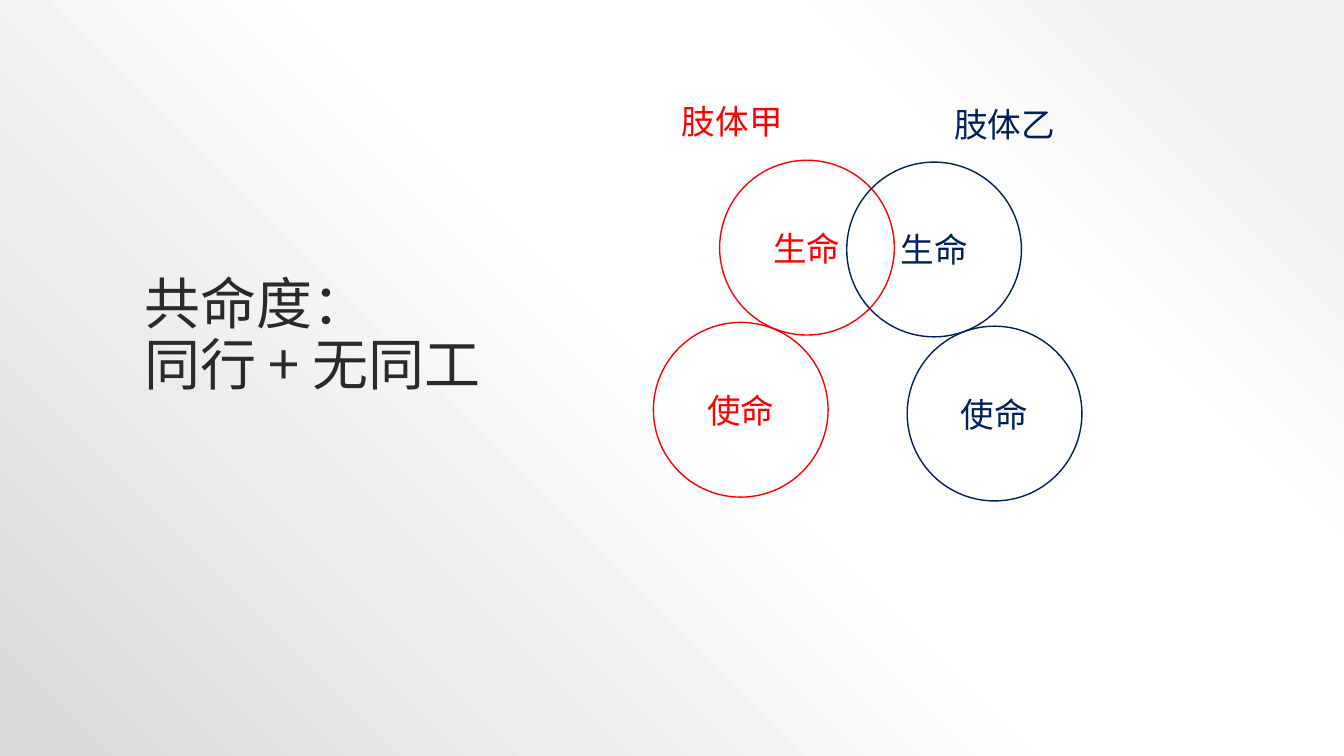
"""Build a slide on two members whose lives overlap while their missions stay apart."""
from dataclasses import dataclass

from lxml import etree
from pptx import Presentation
from pptx.dml.color import RGBColor
from pptx.enum.shapes import MSO_SHAPE
from pptx.enum.text import MSO_ANCHOR, MSO_AUTO_SIZE, PP_ALIGN
from pptx.oxml.ns import qn
from pptx.util import Pt

CIRCLE = MSO_SHAPE.OVAL
TOP, MIDDLE, BOTTOM = MSO_ANCHOR.TOP, MSO_ANCHOR.MIDDLE, MSO_ANCHOR.BOTTOM
LEFT, CENTER = PP_ALIGN.LEFT, PP_ALIGN.CENTER
FIXED, GROW = MSO_AUTO_SIZE.NONE, MSO_AUTO_SIZE.SHAPE_TO_FIT_TEXT


@dataclass(frozen=True)
class Theme:
    """Colours, fonts and type sizes of the slide."""

    ink: str = "2A2A2A"
    first: str = "FF0000"
    second: str = "002060"
    backdrop: tuple = ((10, "F2F2F2"), (28, "FFFFFF"), (48, "FFFFFF"), (100, "D9D9D9"))
    chinese: str = "Noto Sans CJK SC"
    latin: str = "Quicksand"
    title_size: int = 40
    label_size: int = 24
    line_width: int = 1
    line_spacing: float = 0.9


class SlideBuilder:
    """Holds the theme and the current slide and adds elements to it."""

    def __init__(self, slide, theme):
        self.slide = slide
        self.theme = theme

    def background(self):
        """Fill the background with a gradient centred on the top right corner."""
        self.slide.background.fill.gradient()
        gradient = self.slide.element.find(".//" + qn("a:gradFill"))
        for child in list(gradient):
            gradient.remove(child)
        stops = etree.SubElement(gradient, qn("a:gsLst"))
        for percent, color in self.theme.backdrop:
            stop = etree.SubElement(stops, qn("a:gs"), pos=str(percent * 1000))
            etree.SubElement(stop, qn("a:srgbClr"), val=color)
        route = etree.SubElement(gradient, qn("a:path"), path="circle")
        etree.SubElement(route, qn("a:fillToRect"), l="100000", b="100000")

    def set_text(self, shape, text, color, size, font, frame_format, paragraph_format):
        """Put formatted text into a shape."""
        frame = shape.text_frame
        for name, value in frame_format.items():
            setattr(frame, name, value)
        para = frame.paragraphs[0]
        para.text = text
        for name, value in paragraph_format.items():
            setattr(para, name, value)
        for span in para.runs:
            for name, value in {"name": font, "size": Pt(size)}.items():
                setattr(span.font, name, value)
            span.font.color.rgb = RGBColor.from_string(color)
            etree.SubElement(span.font._element, qn("a:ea"), typeface=self.theme.chinese)

    def text(self, place, text, color, size, font, anchor=TOP, fit=GROW):
        """Add a left-aligned text box."""
        box = self.slide.shapes.add_textbox(*map(Pt, place))
        frame_format = {"word_wrap": True, "auto_size": fit, "vertical_anchor": anchor}
        paragraph_format = {"alignment": LEFT, "line_spacing": self.theme.line_spacing}
        self.set_text(box, text, color, size, font, frame_format, paragraph_format)

    def circle(self, left, top, diameter, text, color):
        """Add an outlined circle with a centred word."""
        circle = self.slide.shapes.add_shape(CIRCLE, *map(Pt, (left, top, diameter, diameter)))
        circle.shadow.inherit = False
        circle.fill.background()
        circle.line.color.rgb = RGBColor.from_string(color)
        circle.line.width = Pt(self.theme.line_width)
        self.set_text(circle, text, color, self.theme.label_size, self.theme.latin,
                      {"word_wrap": True, "vertical_anchor": MIDDLE}, {"alignment": CENTER})


def main():
    """Create the deck and save it."""
    deck = Presentation()
    deck.slide_width, deck.slide_height = Pt(960), Pt(540)
    theme = Theme()
    page = SlideBuilder(deck.slides.add_slide(deck.slide_layouts[6]), theme)
    page.background()
    page.text((96, 183, 299, 104.5), "共命度：\v同行 + 无同工", theme.ink,
              theme.title_size, theme.chinese, BOTTOM, FIXED)

    diameter = 124.8
    members = (
        ("肢体甲", theme.first, (480, 71.5), (514, 114.5), (466.7, 230.3)),
        ("肢体乙", theme.second, (674.5, 74), (604.8, 115.8), (648, 233)),
    )
    for name, color, label, life, mission in members:
        page.circle(*life, diameter, "生命", color)
        page.circle(*mission, diameter, "使命", color)
        page.text((*label, 113, 33), name, color, theme.label_size, theme.latin)
    deck.save("out.pptx")


if __name__ == "__main__":
    main()
